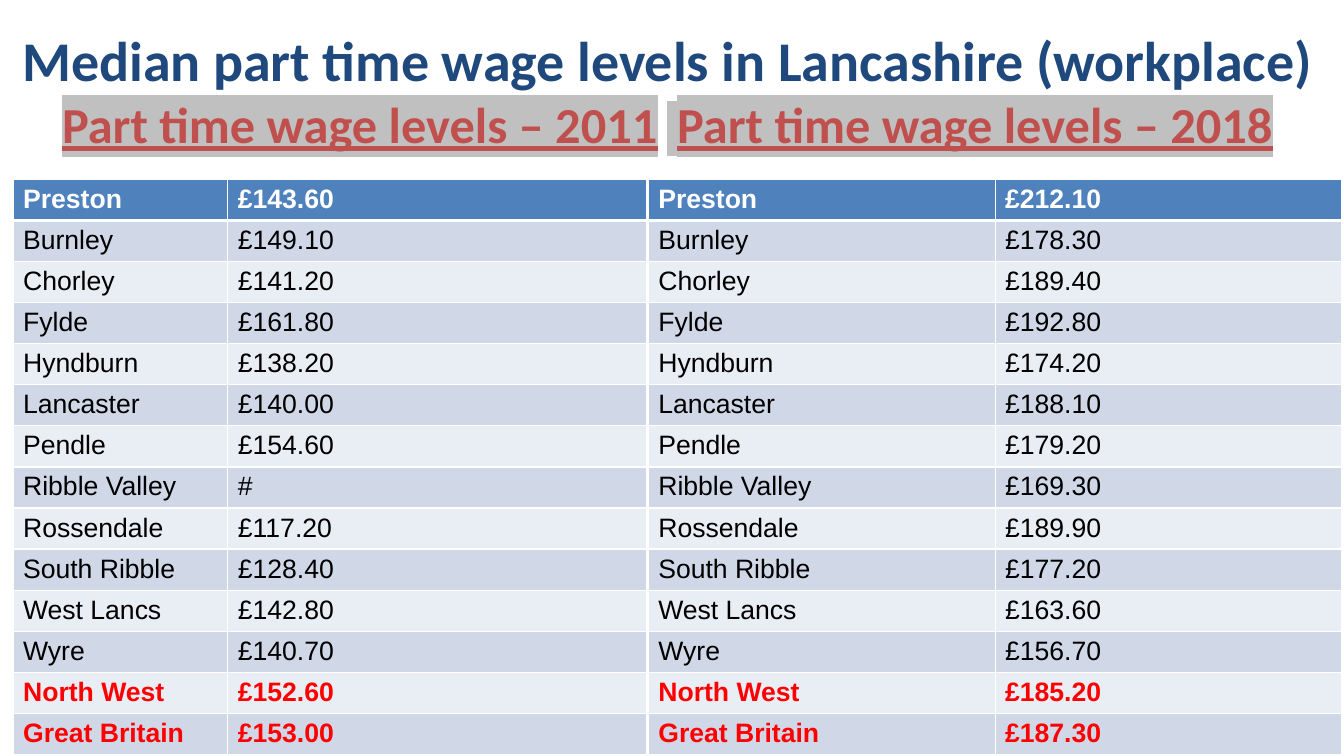
from lxml import etree
from pptx import Presentation
from pptx.dml.color import RGBColor
from pptx.enum.text import MSO_ANCHOR, PP_ALIGN
from pptx.oxml.ns import qn
from pptx.util import Inches, Pt

COLORS = {
    "navy": "1F497D",
    "brick": "C0504D",
    "highlight": "C0C0C0",
    "header": "4F81BD",
    "band_dark": "D0D8E8",
    "band_light": "E9EDF4",
    "white": "FFFFFF",
    "black": "000000",
    "red": "FF0000",
}

AREAS = ["Preston", "Burnley", "Chorley", "Fylde", "Hyndburn", "Lancaster", "Pendle",
         "Ribble Valley", "Rossendale", "South Ribble", "West Lancs", "Wyre",
         "North West", "Great Britain"]
BENCHMARKS = {"North West", "Great Britain"}
WAGES_2011 = ["£143.60", "£149.10", "£141.20", "£161.80", "£138.20", "£140.00", "£154.60",
              "#", "£117.20", "£128.40", "£142.80", "£140.70", "£152.60", "£153.00"]
WAGES_2018 = ["£212.10", "£178.30", "£189.40", "£192.80", "£174.20", "£188.10", "£179.20",
              "£169.30", "£189.90", "£177.20", "£163.60", "£156.70", "£185.20", "£187.30"]


def color(name):
    return RGBColor.from_string(COLORS[name])


def add_span(para, text, size, color_name, underline=False, highlighted=True):
    span = para.add_run()
    span.text = text
    span.font.size = Pt(size)
    span.font.underline = underline
    span.font.color.rgb = color(color_name)
    if highlighted:
        highlight = etree.Element(qn("a:highlight"))
        etree.SubElement(highlight, qn("a:srgbClr"), val=COLORS["highlight"])
        span.font._element.find(qn("a:solidFill")).addnext(highlight)


def add_title(page, left, top, width, height):
    box = page.shapes.add_textbox(Inches(left), Inches(top), Inches(width), Inches(height))
    frame = box.text_frame
    frame.word_wrap = True
    frame.vertical_anchor = MSO_ANCHOR.MIDDLE
    para = frame.paragraphs[0]
    para.alignment = PP_ALIGN.CENTER
    para.font.name = "Calibri"
    para.font.bold = True
    add_span(para, "Median part time wage levels in Lancashire (workplace)", 40, "navy",
             highlighted=False)
    para.add_line_break()
    # Column headings, parted by a tab and an en space
    add_span(para, "Part time wage levels – 2011", 36, "brick", underline=True)
    add_span(para, "\t", 32, "brick", underline=True)
    add_span(para, " ", 32, "navy")
    add_span(para, "Part time wage levels – 2018", 36, "brick", underline=True)


def set_borders(cell, top, bottom):
    properties = cell._tc.get_or_add_tcPr()
    for side, points in (("L", 1), ("R", 1), ("T", top), ("B", bottom)):
        line = etree.SubElement(properties, qn(f"a:ln{side}"), w=str(Pt(points)))
        fill = etree.SubElement(line, qn("a:solidFill"))
        etree.SubElement(fill, qn("a:srgbClr"), val=COLORS["white"])


def add_wage_table(page, left, top, height, column_widths, wages):
    frame = page.shapes.add_table(len(AREAS), 2, Inches(left), Inches(top),
                                  Inches(sum(column_widths)), Inches(height))
    table = frame.table
    table.horz_banding = False
    for column, width in zip(table.columns, column_widths):
        column.width = Inches(width)

    for index, (area, wage) in enumerate(zip(AREAS, wages)):
        is_header = index == 0
        is_benchmark = area in BENCHMARKS
        if is_header:
            fill_name, text_name = "header", "white"
        else:
            fill_name = "band_dark" if index % 2 else "band_light"
            text_name = "red" if is_benchmark else "black"
        for cell, text in zip(table.rows[index].cells, (area, wage)):
            set_borders(cell, top=3 if index == 1 else 1, bottom=3 if is_header else 1)
            cell.fill.solid()
            cell.fill.fore_color.rgb = color(fill_name)
            # A slim bottom margin keeps every row at its set height
            cell.margin_top = Inches(0.05)
            cell.margin_bottom = Inches(0.01)
            cell.text = text
            font = cell.text_frame.paragraphs[0].font
            font.name = "Arial"
            font.size = Pt(19)
            font.bold = is_header or is_benchmark
            font.color.rgb = color(text_name)


def main():
    deck = Presentation()
    deck.slide_width = Inches(13.33)
    deck.slide_height = Inches(7.5)
    page = deck.slides.add_slide(deck.slide_layouts[6])

    add_title(page, 0.02, 0, 13.2, 1.78)
    # Wages by area: 2011 on the left, 2018 on the right
    add_wage_table(page, 0.13, 1.78, 5.71, (2.13, 4.15), WAGES_2011)
    add_wage_table(page, 6.43, 1.78, 5.71, (3.44, 3.44), WAGES_2018)
    deck.save("out.pptx")


if __name__ == "__main__":
    main()
